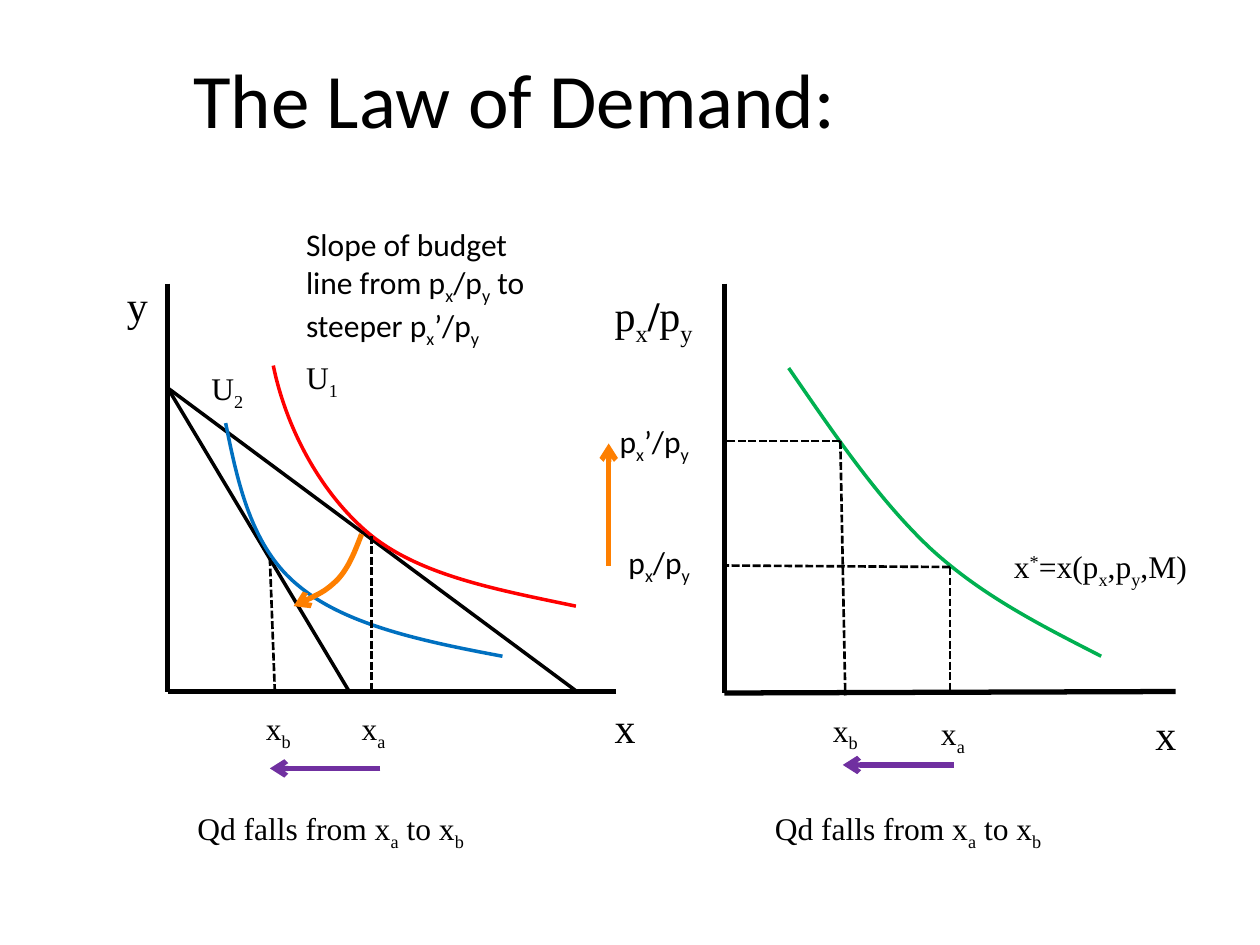
from dataclasses import dataclass

from pptx import Presentation
from pptx.dml.color import RGBColor as RGB
from pptx.enum.dml import MSO_LINE
from pptx.enum.text import MSO_ANCHOR, MSO_AUTO_SIZE as AUTO, PP_ALIGN
from pptx.oxml.ns import qn
from pptx.util import Cm, Pt


@dataclass(frozen=True)
class Theme:
    """Colours, fonts, type sizes and line widths of the slide."""
    black: str = "000000"
    red: str = "FF0000"
    blue: str = "0070C0"
    green: str = "00B050"
    orange: str = "FE7F00"
    purple: str = "7030A0"
    sans: str = "Calibri"
    serif: str = "Times New Roman"
    title: int = 44
    axis: int = 24
    label: int = 18
    thick: float = 3
    medium: float = 2
    thin: float = 1.5


class Deck:
    """Draws each kind of element on the current slide in one style."""

    def __init__(self, prs, theme):
        """Start a title-only slide."""
        self.theme = theme
        self.slide = prs.slides.add_slide(prs.slide_layouts[5])

    def font(self, r, size, name):
        """Format one run."""
        r.font.size, r.font.name = Pt(size), name
        r.font.color.rgb = RGB.from_string(self.theme.black)

    def title(self, text, x, y, w, h):
        """Fill and place the title placeholder."""
        sp = self.slide.shapes.title
        sp.left, sp.top, sp.width, sp.height = Cm(x), Cm(y), Cm(w), Cm(h)
        tf = sp.text_frame
        tf.text = text
        tf.vertical_anchor = MSO_ANCHOR.MIDDLE
        p = tf.paragraphs[0]
        p.alignment = PP_ALIGN.CENTER
        self.font(p.runs[0], self.theme.title, self.theme.sans)

    def text(self, marked, x, y, w, h=1.02, size=None, name=None, wrap=False):
        """Add text whose |-separated runs start with _ (sub), ^ (super) or ! (bold)."""
        tf = self.slide.shapes.add_textbox(Cm(x), Cm(y), Cm(w), Cm(h)).text_frame
        tf.word_wrap, tf.auto_size = wrap, AUTO.SHAPE_TO_FIT_TEXT
        for part in marked.split("|"):
            r = tf.paragraphs[0].add_run()
            r.text = part.lstrip("_^!")
            self.font(r, size or self.theme.label, name or self.theme.serif)
            if part[0] == "!":
                r.font.bold = True
            elif part[0] in "_^":
                shift = "-25000" if part[0] == "_" else "30000"
                r.font._element.set("baseline", shift)

    def stroke(self, s, color, width, dash=False, arrow=False):
        """Style a line or a curve."""
        s.line.color.rgb, s.line.width = RGB.from_string(color), Pt(width)
        if dash:
            s.line.dash_style = MSO_LINE.SQUARE_DOT
        if arrow:
            ln = s.line._get_or_add_ln()
            ln.append(ln.makeelement(qn("a:tailEnd"), {"type": "arrow"}))

    def line(self, x1, y1, x2, y2, color, width, **style):
        """Add a straight line without shadow."""
        s = self.slide.shapes.add_connector(1, Cm(x1), Cm(y1), Cm(x2), Cm(y2))
        self.stroke(s, color, width, **style)
        spPr = s._element.spPr
        spPr.append(spPr.makeelement(qn("a:effectLst"), {}))

    def curve(self, points, color, width, **style):
        """Add a chain of cubic curves: a start, then three points for each."""
        pts = [(Cm(x), Cm(y)) for x, y in points]
        fb = self.slide.shapes.build_freeform(*pts[0])
        fb.add_line_segments(pts[1:], close=False)
        s = fb.convert_to_shape()
        steps = list(s._element.spPr.iter(qn("a:lnTo")))
        for i in range(0, len(steps), 3):
            cubic = steps[i].makeelement(qn("a:cubicBezTo"), {})
            steps[i].addprevious(cubic)
            for step in steps[i:i + 3]:
                cubic.append(step[0])
                step.getparent().remove(step)
        s.fill.background()
        s.shadow.inherit = False
        self.stroke(s, color, width, **style)


def main():
    """Build the slide on the law of demand."""
    prs = Presentation()
    prs.slide_width, prs.slide_height = Cm(25.4), Cm(19.05)
    t = Theme()
    d = Deck(prs, t)
    d.title("The Law of Demand:", 1.27, 0.76, 18.21, 2.41)

    axes = [(3.38, 5.72, 3.38, 13.94), (12.42, 13.94, 3.38, 13.94),
            (14.6, 5.72, 14.6, 13.97), (23.7, 13.94, 14.6, 13.97)]
    for ends in axes:
        d.line(*ends, t.black, t.thick)
    for foot in (11.63, 7.04):
        d.line(3.38, 7.82, foot, 13.94, t.black, t.medium)

    curves = [
        (t.blue, [(4.55, 8.53), (4.8, 9.78), (5.08, 11.05), (6.02, 11.81),
                  (6.96, 12.6), (8.53, 12.93), (10.13, 13.23)]),
        (t.red, [(5.51, 7.37), (5.77, 8.64), (6.48, 9.98), (7.49, 10.8),
                 (8.51, 11.61), (10.03, 11.89), (11.61, 12.22)]),
        (t.green, [(15.9, 7.42), (16.81, 8.74), (17.7, 10.06), (18.75, 11.05),
                   (19.79, 12.01), (21.01, 12.62), (22.2, 13.23)]),
    ]
    for color, points in curves:
        d.curve(points, color, t.medium)

    guides = [(7.49, 10.8, 7.49, 13.89), (5.44, 11.25, 5.54, 13.94),
              (19.15, 11.43, 19.15, 13.97), (16.94, 8.89, 17.04, 14.02),
              (16.94, 8.89, 14.6, 8.89), (19.15, 11.43, 14.6, 11.4)]
    for ends in guides:
        d.line(*ends, t.black, t.thin, dash=True)

    labels = [("x|_b", 5.11, 14.17, 1.04), ("x|_a", 7.04, 14.17, 1.02),
              ("x|_b", 16.54, 14.2, 1.04), ("x|_a", 18.72, 14.27, 1.02),
              ("U|_1", 5.92, 7.09, 1.19), ("U|_2", 4.01, 7.32, 1.19),
              ("x|^*|=x(p|_x|,p|_y|,M)", 20.19, 10.9, 4.09)]
    for label in labels:
        d.text(*label)
    for x in (3.73, 15.37):
        d.text("Qd falls from x|_a| to x|_b", x, 16.18, 6.73, wrap=True)

    d.text("y", 2.31, 5.51, 0.94, 1.27, t.axis)
    axis_names = [("x", 12.14, 14.02, 0.76), ("x", 23.04, 14.15, 0.97),
                  ("p|_x|!/|p|_y", 12.14, 5.72, 2.46)]
    for axis_name in axis_names:
        d.text(*axis_name, 1.27, t.axis, wrap=True)

    prices = [("p|_x|/p|_y", 12.42, 10.82, 1.93, 1.02),
              ("p|_x|’/p|_y", 12.24, 8.38, 2.11, 1.02),
              ("Slope of budget line from p|_x|/p|_y| to steeper p|_x|’/p|_y",
               5.92, 4.42, 5.64, 2.57)]
    for price in prices:
        d.text(*price, name=t.sans, wrap=True)

    rotation = [(7.29, 10.77), (7.16, 11.1), (7.04, 11.43), (6.81, 11.68),
                (6.58, 11.91), (6.25, 12.07), (5.92, 12.22)]
    d.curve(rotation, t.orange, t.thick, arrow=True)
    arrows = [(12.27, 11.4, 12.27, 8.94, t.orange),
              (19.23, 15.42, 16.99, 15.42, t.purple),
              (7.67, 15.49, 5.44, 15.49, t.purple)]
    for arrow in arrows:
        d.line(*arrow, t.thick, arrow=True)

    prs.save("out.pptx")


if __name__ == "__main__":
    main()
